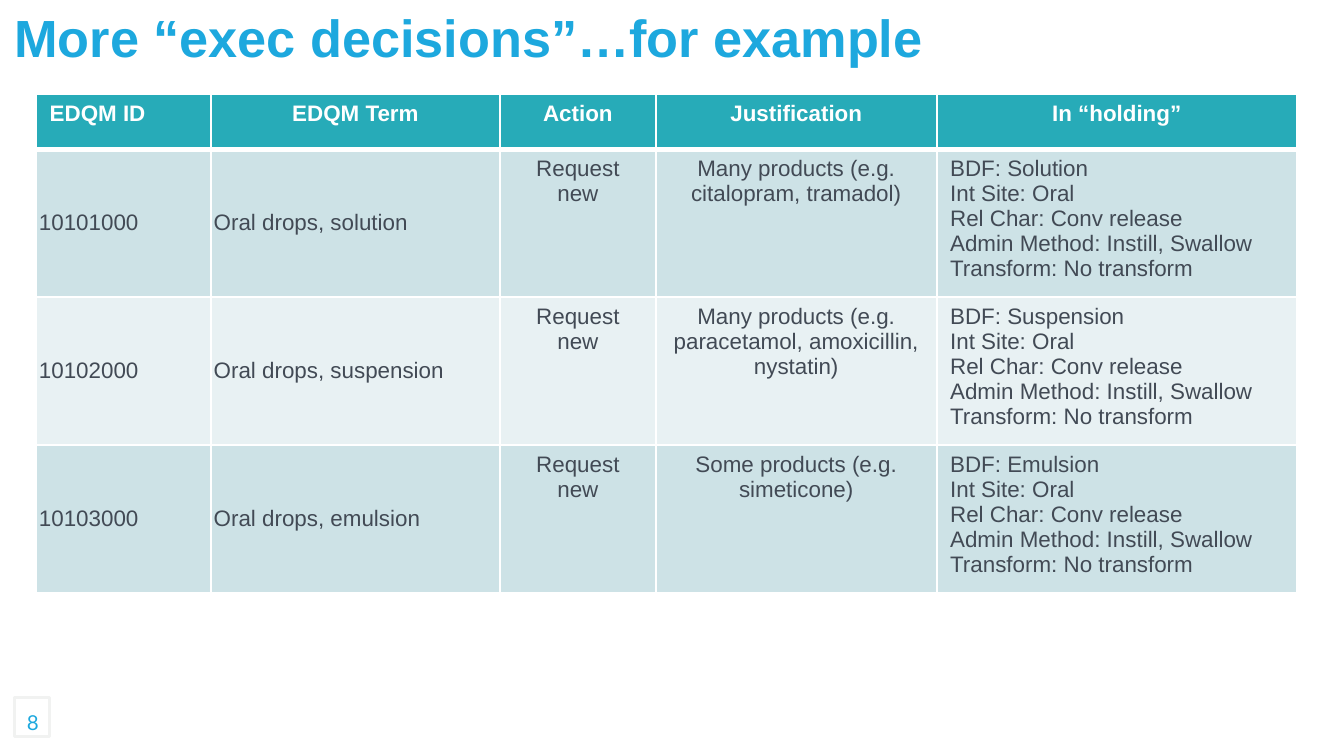
from lxml.etree import SubElement
from pptx import Presentation
from pptx.dml.color import RGBColor
from pptx.enum.shapes import MSO_SHAPE
from pptx.enum.text import MSO_ANCHOR, PP_ALIGN
from pptx.oxml.ns import qn
from pptx.util import Inches, Pt

COLORS = {
    "accent": "1DA8DE",
    "header": "27ABB8",
    "odd_row": "CDE2E6",
    "even_row": "E8F1F3",
    "text": "424A55",
    "white": "FFFFFF",
    "frame": "F1F2F1",
}
HEADERS = ["EDQM ID", "EDQM Term", "Action", "Justification", "In “holding”"]
DROPS = [
    ("10101000", "solution", "Many products (e.g. citalopram, tramadol)"),
    ("10102000", "suspension", "Many products (e.g. paracetamol, amoxicillin, nystatin)"),
    ("10103000", "emulsion", "Some products (e.g. simeticone)"),
]
COLUMN_WIDTHS = [1.3, 2.15, 1.16, 2.09, 2.68]
ROW_HEIGHT = 0.41
CENTERED_COLUMNS = (2, 3)


def color(name):
    """Return the named palette colour."""
    return RGBColor.from_string(COLORS[name])


def set_font(paragraph, size, color_name, bold=False, name="Arial"):
    """Set the font of a whole paragraph."""
    font = paragraph.font
    font.name, font.size, font.bold = name, Pt(size), bold
    font.color.rgb = color(color_name)


def set_margins(target, horizontal, vertical):
    """Set the inner margins of a text frame or table cell."""
    target.margin_left = target.margin_right = Inches(horizontal)
    target.margin_top = target.margin_bottom = Inches(vertical)


def set_borders(cell, bottom_width):
    """Draw white borders around a table cell."""
    properties = cell._tc.get_or_add_tcPr()
    widths = {"lnL": 1, "lnR": 1, "lnT": 1, "lnB": bottom_width}
    for index, (side, width) in enumerate(widths.items()):
        line = SubElement(properties, qn(f"a:{side}"), w=str(Pt(width)))
        fill = SubElement(line, qn("a:solidFill"))
        SubElement(fill, qn("a:srgbClr"), val=COLORS["white"])
        properties.insert(index, line)


def fill_cell(cell, text, fill_name, header, centered):
    """Write and style one table cell."""
    cell.text = text
    cell.fill.solid()
    cell.fill.fore_color.rgb = color(fill_name)
    set_borders(cell, 3 if header else 1)
    for paragraph in cell.text_frame.paragraphs:
        paragraph.alignment = PP_ALIGN.CENTER if centered else PP_ALIGN.LEFT
        set_font(paragraph, 12, "white" if header else "text", bold=header)


def add_title(slide, left, top, width, height):
    """Add the slide title."""
    box = slide.shapes.add_textbox(Inches(left), Inches(top), Inches(width), Inches(height))
    frame = box.text_frame
    frame.word_wrap = True
    frame.vertical_anchor = MSO_ANCHOR.TOP
    frame.text = "More “exec decisions”…for example"
    set_font(frame.paragraphs[0], 28, "accent", bold=True)


def add_drops_table(slide, left, top, width, height):
    """Add the table of oral drops terms and decisions."""
    rows = [HEADERS]
    for identifier, form, justification in DROPS:
        holding = [
            f"BDF: {form.capitalize()}",
            "Int Site: Oral",
            "Rel Char: Conv release",
            "Admin Method: Instill, Swallow",
            "Transform: No transform",
        ]
        rows.append([identifier, f"Oral drops, {form}", "Request new",
                     justification, "\n".join(holding)])
    table_frame = slide.shapes.add_table(
        len(rows), len(HEADERS), Inches(left), Inches(top), Inches(width), Inches(height)
    )
    table = table_frame.table
    for column, column_width in zip(table.columns, COLUMN_WIDTHS):
        column.width = Inches(column_width)
    for row_index, texts in enumerate(rows):
        header = row_index == 0
        table.rows[row_index].height = Inches(ROW_HEIGHT)
        fill_name = "header" if header else "odd_row" if row_index % 2 else "even_row"
        for column_index, text in enumerate(texts):
            cell = table.cell(row_index, column_index)
            centered = column_index in CENTERED_COLUMNS or (header and column_index > 0)
            fill_cell(cell, text, fill_name, header, centered)
            if not header and column_index < 2:
                cell.vertical_anchor = MSO_ANCHOR.MIDDLE
                set_margins(cell, 0.02, 0.01)
    table_frame.width, table_frame.height = Inches(width), Inches(height)


def add_page_number(slide, left, top, width, height):
    """Add the framed page number."""
    frame_box = slide.shapes.add_shape(
        MSO_SHAPE.RECTANGLE, Inches(left), Inches(top), Inches(width), Inches(height)
    )
    frame_box.shadow.inherit = False
    frame_box.fill.solid()
    frame_box.fill.fore_color.rgb = color("white")
    frame_box.line.color.rgb = color("frame")
    frame_box.line.width = Pt(1.5)
    number_box = slide.shapes.add_textbox(
        Inches(left - 0.02), Inches(top + 0.05), Inches(width + 0.05), Inches(height + 0.06)
    )
    frame = number_box.text_frame
    frame.word_wrap = True
    set_margins(frame, 0.07, 0.04)
    frame.text = "8"
    paragraph = frame.paragraphs[0]
    paragraph.alignment = PP_ALIGN.CENTER
    set_font(paragraph, 11, "accent", name="Lato")


def main():
    """Build and save the presentation."""
    presentation = Presentation()
    presentation.slide_width = Inches(10)
    presentation.slide_height = presentation.slide_width * 9 // 16
    slide = presentation.slides.add_slide(presentation.slide_layouts[6])
    add_page_number(slide, 0.11, 5.19, 0.26, 0.29)
    add_title(slide, 0.01, -0.01, 8.62, 0.66)
    add_drops_table(slide, 0.27, 0.7, 9.37, 3.71)
    presentation.save("out.pptx")


if __name__ == "__main__":
    main()
